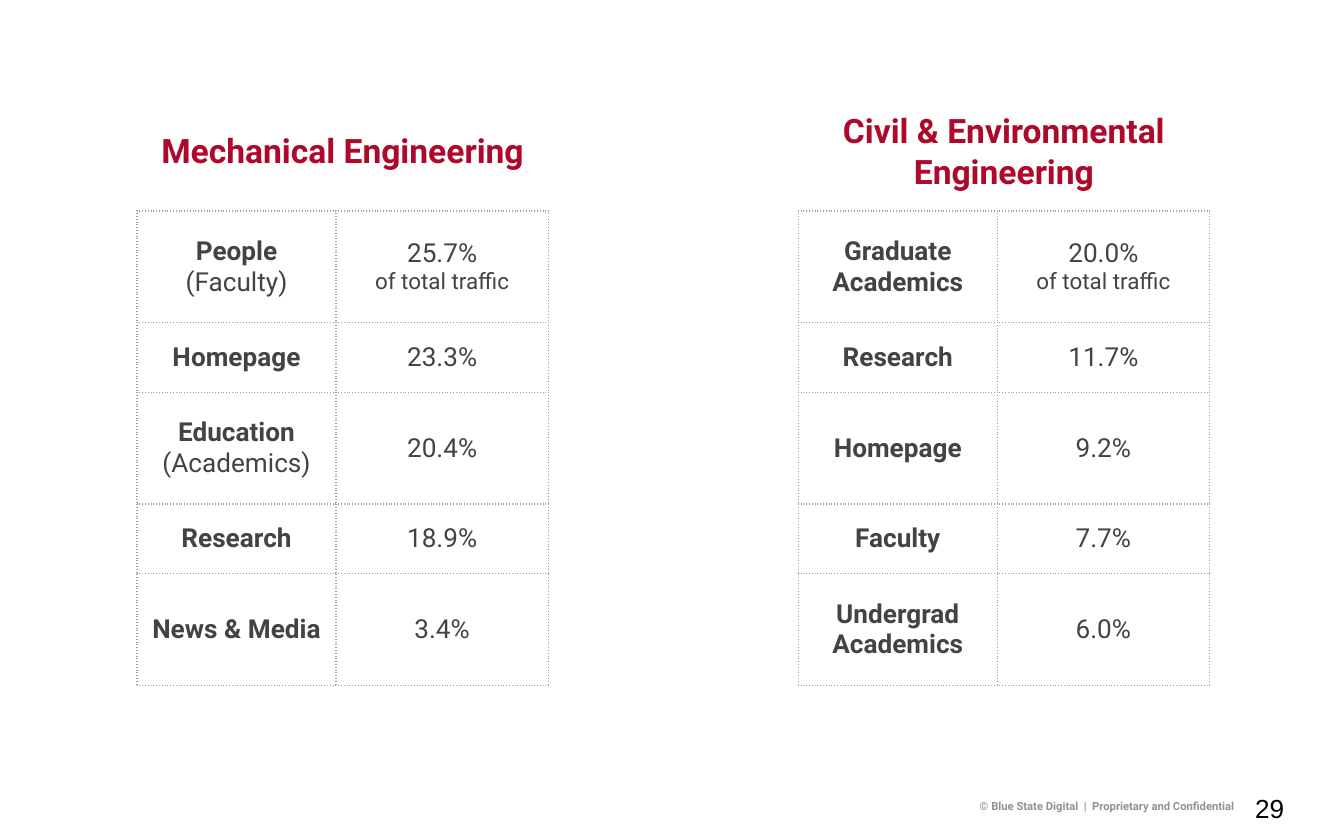
from lxml.etree import SubElement
from pptx import Presentation
from pptx.dml.color import RGBColor
from pptx.enum.text import MSO_ANCHOR, PP_ALIGN
from pptx.oxml.ns import qn
from pptx.util import Inches, Pt

WIDTH, HEIGHT = 10, 6.25
COLS = [1.48, 1.58]
ROWS = [0.83, 0.52, 0.83, 0.52, 0.83]
TABLE_TOP = 1.57
HEADING_WIDTH, HEADING_HEIGHT = 3.2, 0.57
RED, DARK, GREY, LINE, BLACK = "AE082B", "434343", "929292", "9E9E9E", "000000"

DEPARTMENTS = [
    ("Mechanical Engineering", 1.02, 0.87, [
        ("People\v(Faculty)", "25.7%\nof total traffic"),
        ("Homepage", "23.3%"),
        ("Education\v(Academics)", "20.4%"),
        ("Research", "18.9%"),
        ("News & Media", "3.4%"),
    ]),
    ("Civil & Environmental Engineering", 5.94, 0.72, [
        ("Graduate Academics", "20.0%\nof total traffic"),
        ("Research", "11.7%"),
        ("Homepage", "9.2%"),
        ("Faculty", "7.7%"),
        ("Undergrad Academics", "6.0%"),
    ]),
]


def rgb(color):
    """Turn a hex string into a colour."""
    return RGBColor.from_string(color)


def format_run(r, size, color, bold=False, font="Roboto"):
    """Set the font of a run."""
    r.font.name, r.font.size, r.font.bold = font, Pt(size), bold
    r.font.color.rgb = rgb(color)


def set_margins(box, inset):
    """Give a text frame or cell equal margins."""
    box.margin_left = box.margin_right = Inches(inset)
    box.margin_top = box.margin_bottom = Inches(inset)


def add_text(s, text, box, size, color, bold=False, font="Roboto",
             align=PP_ALIGN.LEFT, anchor=MSO_ANCHOR.MIDDLE, inset=0.1):
    """Add a one-paragraph text box and return its paragraph."""
    tf = s.shapes.add_textbox(*map(Inches, box)).text_frame
    tf.word_wrap, tf.vertical_anchor = True, anchor
    set_margins(tf, inset)
    tf.text = text
    p = tf.paragraphs[0]
    p.alignment = align
    format_run(p.runs[0], size, color, bold, font)
    return p


def add_borders(cell):
    """Draw dotted lines on the four sides of a cell."""
    tcPr = cell._tc.get_or_add_tcPr()
    for side in ("lnL", "lnR", "lnT", "lnB"):
        ln = SubElement(tcPr, qn(f"a:{side}"), w=str(Pt(0.75)))
        fill = SubElement(ln, qn("a:solidFill"))
        SubElement(fill, qn("a:srgbClr"), val=LINE)
        SubElement(ln, qn("a:prstDash"), val="dot")


def fill_cell(cell, text, is_label):
    """Write a cell, with the first line of a label in bold."""
    add_borders(cell)
    cell.fill.background()
    cell.vertical_anchor = MSO_ANCHOR.MIDDLE
    set_margins(cell, 0.1)
    tf = cell.text_frame
    tf.text = text
    for p, size in zip(tf.paragraphs, (14, 12)):
        p.alignment = PP_ALIGN.CENTER
        for i, r in enumerate(p.runs):
            format_run(r, size, DARK, bold=is_label and i == 0)


def add_traffic_table(s, left, data):
    """Add a table of pages and their shares of traffic."""
    frame = s.shapes.add_table(len(ROWS), len(COLS), Inches(left), Inches(TABLE_TOP),
                               Inches(sum(COLS)), Inches(sum(ROWS)))
    table = frame.table
    table.first_row = table.horz_banding = False
    for column, width in zip(table.columns, COLS):
        column.width = Inches(width)
    for row, height, texts in zip(table.rows, ROWS, data):
        row.height = Inches(height)
        for i, (cell, text) in enumerate(zip(row.cells, texts)):
            fill_cell(cell, text, is_label=i == 0)


def add_department(s, name, left, top, data):
    """Add a heading centred over its table."""
    heading_left = left + (sum(COLS) - HEADING_WIDTH) / 2
    add_text(s, name, (heading_left, top, HEADING_WIDTH, HEADING_HEIGHT), 18, RED,
             bold=True, align=PP_ALIGN.CENTER, anchor=MSO_ANCHOR.TOP)
    add_traffic_table(s, left, data)


def add_footer(s):
    """Add the copyright line and the page number."""
    p = add_text(s, "© Blue State Digital  |  Proprietary and Confidential",
                 (6.76, 5.93, 2.58, 0.15), 6, GREY, bold=True, inset=0.03)
    p.line_spacing = 0.8
    pPr = p._p.get_or_add_pPr()
    pPr.set("marL", str(Inches(0.21)))
    pPr.set("indent", str(Inches(0.29)))
    add_text(s, "29", (9.24, 5.77, 0.45, 0.48), 14, BLACK, font="Arial")


def main():
    """Build the slide and save it."""
    prs = Presentation()
    prs.slide_width, prs.slide_height = Inches(WIDTH), Inches(HEIGHT)
    s = prs.slides.add_slide(prs.slide_layouts[6])
    add_footer(s)
    for department in DEPARTMENTS:
        add_department(s, *department)
    prs.save("out.pptx")


if __name__ == "__main__":
    main()
